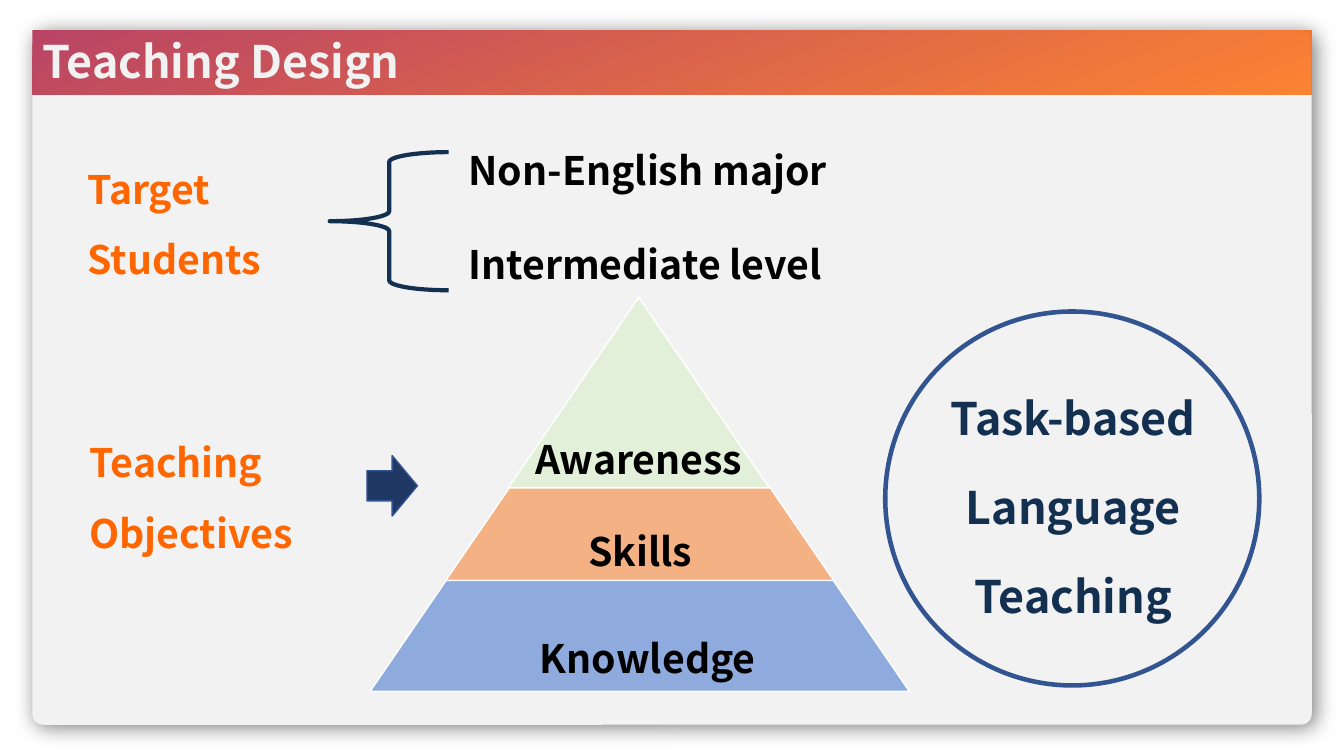
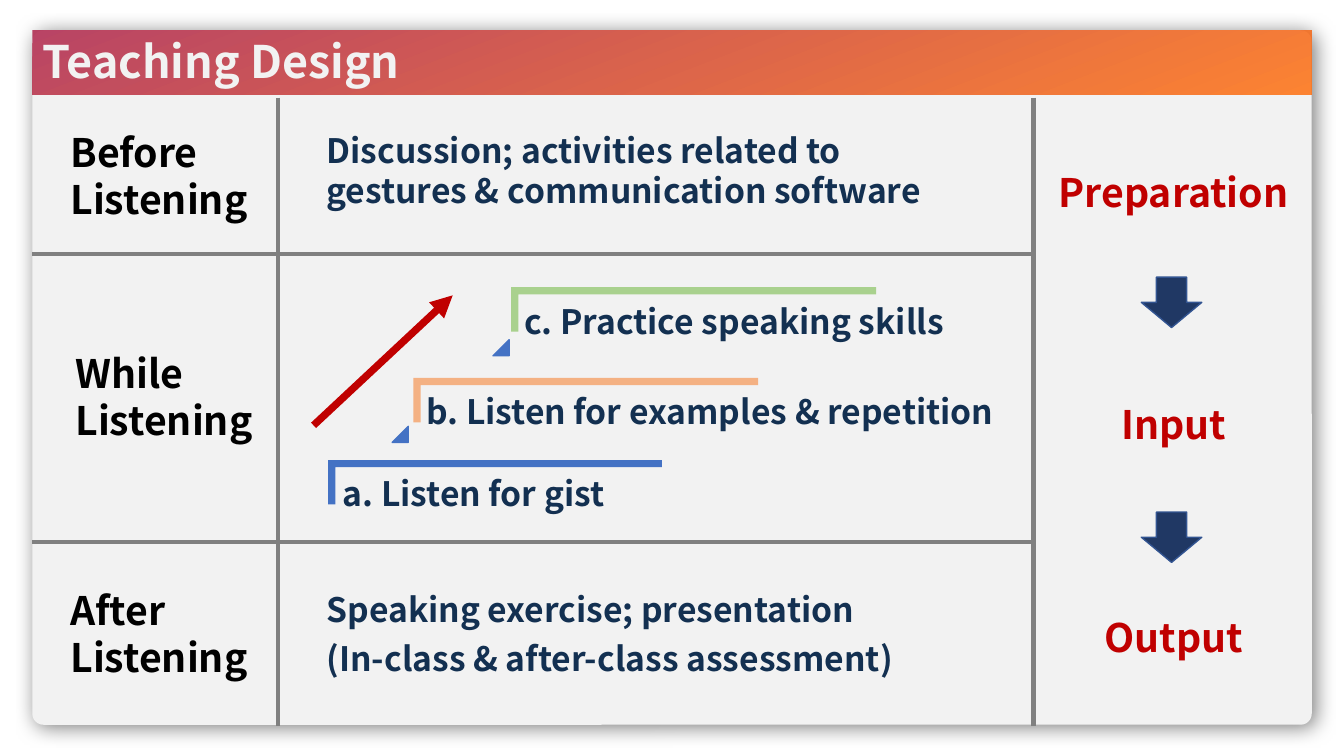
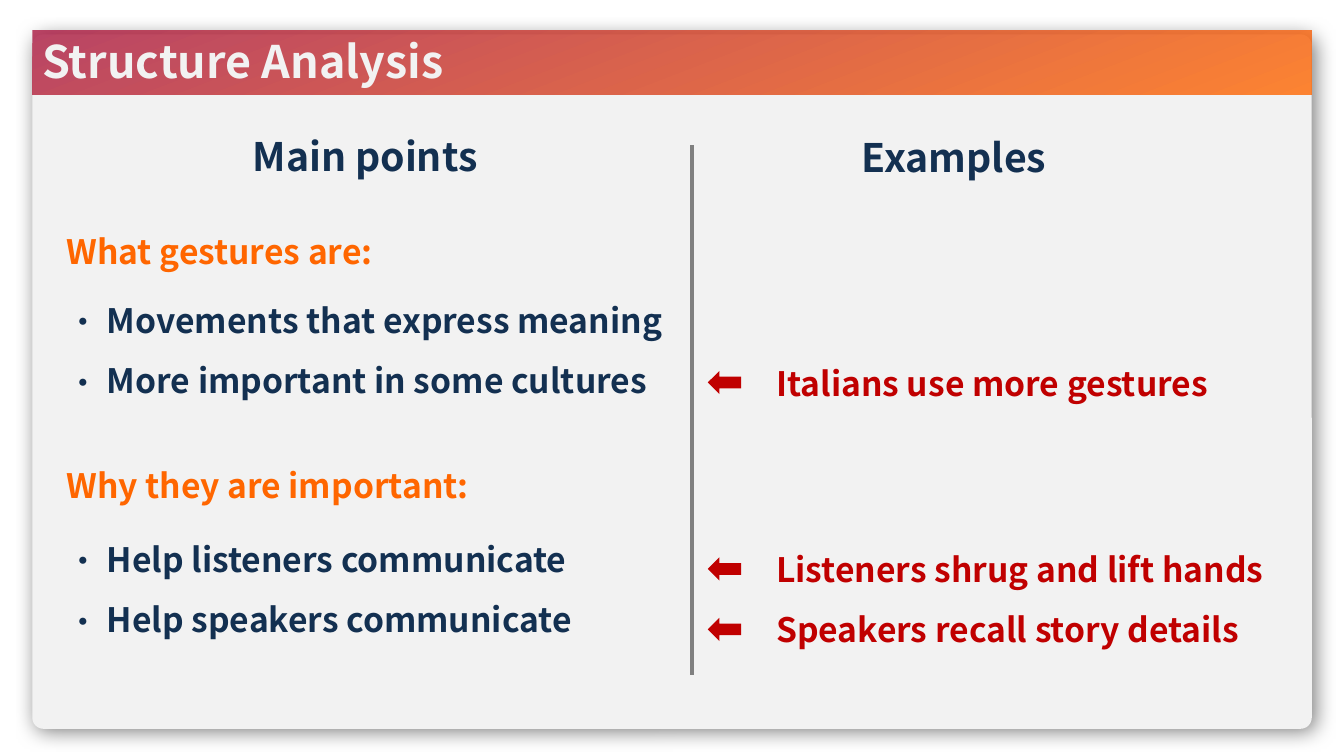
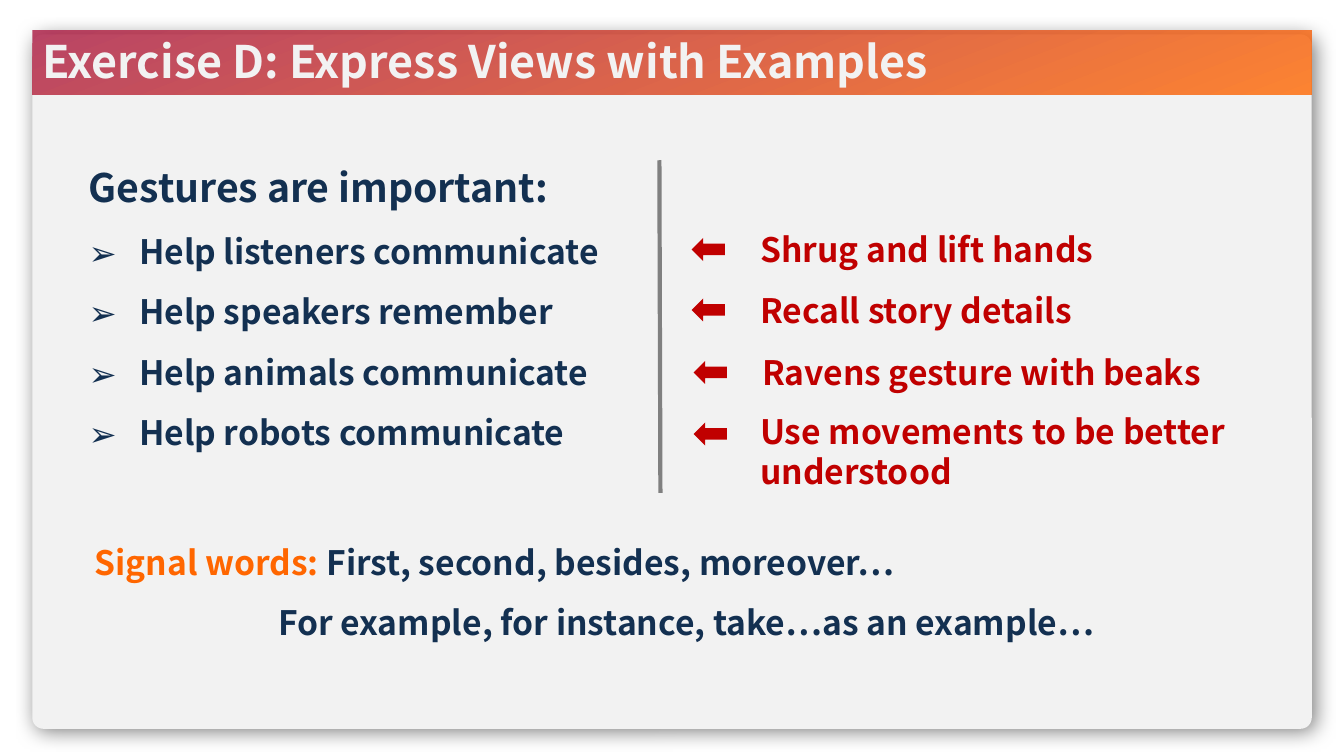
from dataclasses import dataclass
from functools import partial

from lxml import etree
from pptx import Presentation
from pptx.dml.color import RGBColor
from pptx.enum.shapes import MSO_CONNECTOR, MSO_SHAPE as Preset
from pptx.enum.text import MSO_ANCHOR as Anchor, MSO_AUTO_SIZE as AutoSize, PP_ALIGN as Align
from pptx.oxml import parse_xml
from pptx.oxml.ns import nsdecls, qn
from pptx.util import Pt

PX = 9144  # EMU in one px, 100 px to the inch
FONT = "Noto Sans CJK SC"

WHITE = RGBColor(0xFF, 0xFF, 0xFF)
BLACK = RGBColor(0x00, 0x00, 0x00)
PALE = RGBColor(0xF2, 0xF2, 0xF2)
GREY = RGBColor(0x80, 0x80, 0x80)
NAVY = RGBColor(0x13, 0x30, 0x51)
DARK_BLUE = RGBColor(0x20, 0x38, 0x64)
EDGE_BLUE = RGBColor(0x32, 0x54, 0x91)
BLUE = RGBColor(0x44, 0x72, 0xC4)
LIGHT_BLUE = RGBColor(0x8F, 0xAA, 0xDC)
GREEN = RGBColor(0xA9, 0xD1, 0x8E)
LIGHT_GREEN = RGBColor(0xE2, 0xF0, 0xD9)
PEACH = RGBColor(0xF4, 0xB1, 0x83)
ORANGE = RGBColor(0xFF, 0x66, 0x00)
RED = RGBColor(0xC0, 0x00, 0x00)
BAND_START = RGBColor(0xAB, 0x19, 0x42)
BAND_END = RGBColor(0xFF, 0x68, 0x02)

TITLE_AND_CONTENT, TWO_CONTENT, TITLE_ONLY = 1, 3, 5


@dataclass
class Para:
    """One paragraph; more holds further runs as (text, colour)."""
    text: str
    size: int = 24
    color: RGBColor = NAVY
    align: Align = Align.LEFT
    spacing: float = 1.0
    after: int = 0
    bullet: str = ""
    indent: int = 0
    more: tuple = ()


class Deck:
    def __init__(self):
        self.prs = Presentation()
        self.prs.slide_width, self.prs.slide_height = 1333 * PX, 750 * PX
        self.slide = None

    def new_slide(self, title, layout=TITLE_ONLY, card_top=30):
        """Start a slide with its card, gradient band and title."""
        self.slide = self.prs.slides.add_slide(self.prs.slide_layouts[layout])
        card = self.shape(Preset.ROUNDED_RECTANGLE, 32, card_top, 1269, 689, PALE, adj=[0.016])
        effects = card.element.spPr.find(qn("a:effectLst"))
        effects.append(parse_xml(
            f'<a:outerShdw {nsdecls("a")} blurRad="177800" dist="46990" dir="2280000" '
            'algn="tl" rotWithShape="0"><a:srgbClr val="000000">'
            '<a:alpha val="50000"/></a:srgbClr></a:outerShdw>'))
        band = self.shape(Preset.RECTANGLE, 32, 30, 1269, 64)
        band.fill.gradient()
        band.fill.gradient_angle = 291
        for stop, color in zip(band.fill.gradient_stops, (BAND_START, BAND_END)):
            stop.color.rgb = color
        for color in band.element.spPr.iter(qn("a:srgbClr")):
            etree.SubElement(color, qn("a:alpha")).set("val", "80000")
        self.text(32, 28, 915, 54, Para(title, 32, PALE),
                  holder=self.slide.shapes.title, anchor=Anchor.TOP)

    def shape(self, preset, x, y, w, h, fill=None, line=None, width=1.0, adj=(), rotation=0):
        shape = self.slide.shapes.add_shape(preset, x * PX, y * PX, w * PX, h * PX)
        shape.shadow.inherit = False
        shape.rotation = rotation
        for i, value in enumerate(adj):
            shape.adjustments[i] = value
        if fill is None:
            shape.fill.background()
        else:
            shape.fill.solid()
            shape.fill.fore_color.rgb = fill
        if line is None:
            shape.line.fill.background()
        else:
            shape.line.color.rgb = line
            shape.line.width = Pt(width)
        return shape

    def line(self, x1, y1, x2, y2, color=GREY, width=3.0, arrow=False):
        line = self.slide.shapes.add_connector(
            MSO_CONNECTOR.STRAIGHT, x1 * PX, y1 * PX, x2 * PX, y2 * PX)
        line.line.color.rgb = color
        line.line.width = Pt(width)
        if arrow:
            etree.SubElement(line.line._get_or_add_ln(), qn("a:tailEnd")).set("type", "triangle")
        etree.SubElement(line.element.spPr, qn("a:effectLst"))

    def text(self, x, y, w, h, *paras, holder=None, anchor=Anchor.MIDDLE):
        """Fill a new text box, or a placeholder brought to the front."""
        if holder is None:
            holder = self.slide.shapes.add_textbox(0, 0, 0, 0)
        else:
            holder.element.getparent().append(holder.element)
        holder.left, holder.top, holder.width, holder.height = (v * PX for v in (x, y, w, h))
        frame = holder.text_frame
        frame.word_wrap = True
        frame.auto_size = AutoSize.NONE
        frame.vertical_anchor = anchor
        for i, para in enumerate(paras):
            self.paragraph(frame.add_paragraph() if i else frame.paragraphs[0], para)

    def paragraph(self, target, para):
        target.alignment = para.align
        target.line_spacing = para.spacing
        target.space_before, target.space_after = Pt(0), Pt(para.after)
        props = target._p.get_or_add_pPr()
        props.set("marL", str(para.indent * PX))
        props.set("indent", str(-para.indent * PX if para.bullet else 0))
        if para.bullet:
            etree.SubElement(props, qn("a:buFont")).set("typeface", FONT)
            etree.SubElement(props, qn("a:buChar")).set("char", para.bullet)
        else:
            etree.SubElement(props, qn("a:buNone"))
        for text, color in ((para.text, para.color), *para.more):
            run = target.add_run()
            run.text = text
            run.font.name, run.font.size, run.font.bold = FONT, Pt(para.size), True
            run.font.color.rgb = color

    def block_arrow(self, preset, x, y, w, h):
        self.shape(preset, x, y, w, h, DARK_BLUE, EDGE_BLUE)

    def example(self, x, y, text, width=527):
        """A red arrow and the example it points from."""
        self.shape(Preset.LEFT_ARROW, x - 58, y + 29, 33, 23, RED)
        self.text(x, y, width, 81, Para(text, color=RED))


def students_and_objectives(deck):
    deck.new_slide("Teaching Design")
    # Headings on the left
    heading = partial(Para, size=28, color=ORANGE, spacing=1.5, after=6)
    deck.text(77, 170, 276, 81, heading("Target Students"))
    deck.text(79, 441, 272, 81, heading("Teaching Objectives"))
    # Target students
    for y, trait in ((131, "Non-English major"), (224, "Intermediate level")):
        deck.text(455, y, 683, 81, Para(trait, 28, BLACK, spacing=0.9, after=6))
    deck.shape(Preset.LEFT_BRACE, 327, 151, 118, 137, line=NAVY, width=3)
    # Pyramid of objectives
    for x, y, w, h, fill in ((504, 295, 259, 189, LIGHT_GREEN),
                             (442, 484, 385, 92, PEACH),
                             (367, 576, 535, 110, LIGHT_BLUE)):
        deck.shape(Preset.TRAPEZOID, x, y, w, h, fill, WHITE, adj=[0.686])
    level = partial(Para, size=28, color=BLACK, after=6)
    deck.text(521, 411, 286, 105, level("Awareness", spacing=0.5))
    deck.text(514, 600, 257, 105, level("Knowledge", align=Align.CENTER))
    deck.text(455, 494, 360, 105, level("Skills", align=Align.CENTER))
    deck.block_arrow(Preset.RIGHT_ARROW, 364, 452, 50, 60)
    # Method in the circle
    deck.shape(Preset.OVAL, 878, 309, 371, 371, line=EDGE_BLUE, width=3.25)
    deck.text(828, 449, 473, 81,
              *(Para(word, 32, align=Align.CENTER, spacing=1.5, after=6)
                for word in ("Task-based", "Language", "Teaching")))


def listening_stages(deck):
    deck.new_slide("Teaching Design")
    # Grid
    for x in (276, 1025):
        deck.line(x, 97, x, 720)
    for y in (252, 538):
        deck.line(32, y, 1026, y)
    # Stages
    for x, y, stage in ((60, 121, "Before Listening"),
                        (65, 341, "While Listening"),
                        (60, 576, "After Listening")):
        deck.text(x, y, 234, 105, Para(stage, 28, BLACK, after=6))
    # Activities before and after
    deck.text(314, 128, 658, 81, Para(
        "Discussion; activities related to gestures & communication software", after=6))
    deck.text(314, 588, 643, 81,
              Para("Speaking exercise; presentation", after=6),
              Para("(In-class & after-class assessment)", after=6))
    # Staircase of activities while listening
    for x, y, h, color, text_x, text_y, activity in (
            (469, 313, 331, BLUE, 330, 439, "a. Listen for gist"),
            (559, 226, 342, PEACH, 413, 357, "b. Listen for examples & repetition"),
            (666, 126, 362, GREEN, 510, 268, "c. Practice speaking skills")):
        deck.shape(Preset.CORNER, x, y, 44, h, color, adj=[0.161, 0.161], rotation=90)
        deck.text(text_x, text_y, 643, 81, Para(activity, spacing=1.5, after=6))
    for x, y in ((389, 423), (489, 337)):
        deck.shape(Preset.ISOSCELES_TRIANGLE, x, y, 16, 16, BLUE, BLUE, adj=[1])
    deck.line(311, 422, 449, 293, RED, 5.25, arrow=True)
    # Flow on the right
    for y, phase in ((138, "Preparation"), (368, "Input"), (580, "Output")):
        deck.text(1033, y, 262, 81, Para(phase, 28, RED, Align.CENTER, 1.5, 6))
    for y in (275, 508):
        deck.block_arrow(Preset.DOWN_ARROW, 1132, y, 60, 50)


def structure_analysis(deck):
    deck.new_slide("Structure Analysis", TWO_CONTENT, card_top=34)
    deck.line(686, 144, 686, 670)
    # Column heads
    deck.text(241, 91, 256, 127, Para("Main points", 28))
    deck.text(845, 92, 256, 127, Para("Examples", 28))
    # Main points
    deck.text(56, 186, 386, 127, Para("What gestures are:", color=ORANGE))
    deck.text(56, 439, 496, 64, Para("Why they are important:", color=ORANGE, spacing=1.5))
    first_list, second_list = list(deck.slide.placeholders)[1:]
    for holder, y, points in (
            (first_list, 273, ("Movements that express meaning",
                               "More important in some cultures")),
            (second_list, 510, ("Help listeners communicate",
                                "Help speakers communicate"))):
        deck.text(56, y, 644, 129, *(Para(point, spacing=1.5, bullet="·", indent=40)
                                     for point in points), holder=holder)
    # Examples
    deck.example(760, 339, "Italians use more gestures")
    deck.example(760, 524, "Listeners shrug and lift hands")
    deck.example(760, 584, "Speakers recall story details")


def exercise(deck):
    deck.new_slide("Exercise D: Express Views with Examples", TITLE_AND_CONTENT, card_top=34)
    deck.line(654, 159, 655, 489)
    # Views
    views = ("Help listeners communicate", "Help speakers remember",
             "Help animals communicate", "Help robots communicate")
    deck.text(78, 242, 654, 127, Para("Gestures are important:", 28),
              *(Para(view, spacing=1.5, bullet="➢", indent=50) for view in views),
              holder=deck.slide.placeholders[1])
    # Examples
    deck.example(744, 207, "Shrug and lift hands")
    deck.example(744, 267, "Recall story details")
    deck.example(746, 329, "Ravens gesture with beaks")
    deck.shape(Preset.LEFT_ARROW, 688, 419, 33, 23, RED)
    deck.text(744, 407, 527, 81, Para("Use movements to be better understood", color=RED))
    # Signal words
    deck.text(84, 514, 1196, 127,
              Para("Signal words: ", color=ORANGE, spacing=1.5,
                   more=(("First, second, besides, moreover…", NAVY),)),
              Para("For example, for instance, take…as an example…", spacing=1.5, indent=182))


def main():
    deck = Deck()
    students_and_objectives(deck)
    listening_stages(deck)
    structure_analysis(deck)
    exercise(deck)
    deck.prs.save("out.pptx")


if __name__ == "__main__":
    main()
